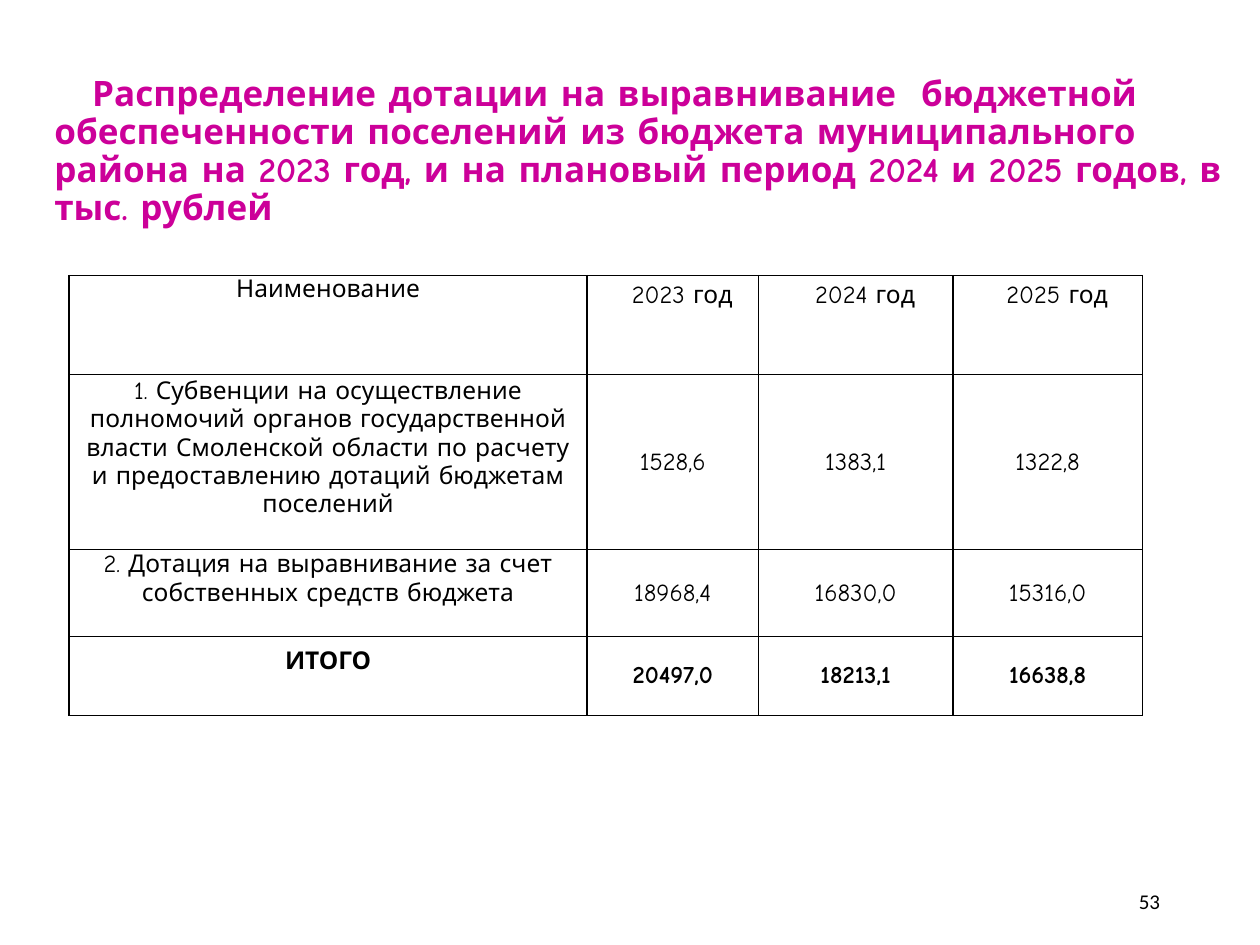
from lxml.etree import SubElement
from pptx import Presentation
from pptx.dml.color import RGBColor
from pptx.enum.text import MSO_ANCHOR, PP_ALIGN
from pptx.oxml.ns import qn
from pptx.util import Pt

TEXT_FONT = "Comic Neue"
BLACK = "000000"
TITLE = ("Распределение дотации на выравнивание  бюджетной обеспеченности "
         "поселений из бюджета муниципального района на 2023 год, и на плановый "
         "период 2024 и 2025 годов, в тыс. рублей")
COL_WIDTHS = [296, 98, 111, 108.5]
ROW_HEIGHTS = [56.5, 96.5, 48.5, 45.2]
ROWS = [
    ["Наименование", "2023 год", "2024 год", "2025 год"],
    ["1. Субвенции на осуществление полномочий органов государственной власти "
     "Смоленской области по расчету и предоставлению дотаций бюджетам поселений",
     "1528,6", "1383,1", "1322,8"],
    ["2. Дотация на выравнивание за счет собственных средств бюджета",
     "18968,4", "16830,0", "15316,0"],
    ["ИТОГО", "20497,0", "18213,1", "16638,8"],
]


def rgb(color):
    return RGBColor.from_string(color)


def add_run(p, text, size, font=TEXT_FONT, color=BLACK, bold=False):
    r = p.add_run()
    r.text = text
    r.font.size = Pt(size)
    r.font.name = font
    r.font.bold = bold
    r.font.color.rgb = rgb(color)


def add_text(s, box, text, align, **style):
    tf = s.shapes.add_textbox(*map(Pt, box)).text_frame
    tf.word_wrap = True
    tf.vertical_anchor = MSO_ANCHOR.MIDDLE
    p = tf.paragraphs[0]
    p.alignment = align
    add_run(p, text, **style)
    return p


def set_margins(cell, left, top, right, bottom):
    cell.margin_left, cell.margin_top = Pt(left), Pt(top)
    cell.margin_right, cell.margin_bottom = Pt(right), Pt(bottom)


def set_borders(cell, color=BLACK, width=1):
    tc_pr = cell._tc.get_or_add_tcPr()
    for i, side in enumerate(("a:lnL", "a:lnR", "a:lnT", "a:lnB")):
        ln = tc_pr.makeelement(qn(side), {"w": str(Pt(width))})
        fill = SubElement(ln, qn("a:solidFill"))
        SubElement(fill, qn("a:srgbClr"), val=color)
        tc_pr.insert(i, ln)


def fill_cell(cell, text, row, col):
    cell.fill.background()
    set_borders(cell)
    p = cell.text_frame.paragraphs[0]
    p.alignment = PP_ALIGN.CENTER
    add_run(p, text, 14, bold=row == len(ROWS) - 1)
    header, name = row == 0, col == 0
    cell.vertical_anchor = MSO_ANCHOR.TOP if header else MSO_ANCHOR.MIDDLE
    if header and not name:
        set_margins(cell, 7.2, 3.6, 7.2, 3.6)
        p._p.get_or_add_pPr().set("marL", str(Pt(10.8)))
    else:
        # Names in the body sit one line above the cell bottom
        set_margins(cell, 5, 0, 5, 16 if name and not header else 0)


def add_grant_table(s, left, top):
    frame = s.shapes.add_table(len(ROWS), len(COL_WIDTHS), Pt(left), Pt(top),
                               Pt(sum(COL_WIDTHS)), Pt(sum(ROW_HEIGHTS)))
    table = frame.table
    table.first_row = table.horz_banding = False
    for column, width in zip(table.columns, COL_WIDTHS):
        column.width = Pt(width)
    for i, (texts, height) in enumerate(zip(ROWS, ROW_HEIGHTS)):
        table.rows[i].height = Pt(height)
        for j, text in enumerate(texts):
            fill_cell(table.cell(i, j), text, i, j)


def main():
    prs = Presentation()
    prs.slide_width, prs.slide_height = Pt(720), Pt(540)
    s = prs.slides.add_slide(prs.slide_layouts[6])

    # Title with an indented first line
    p = add_text(s, (24, 28, 684, 118), TITLE, PP_ALIGN.LEFT,
                 size=20, color="CC0099", bold=True)
    p.line_spacing = 0.9
    p._p.get_or_add_pPr().set("indent", str(Pt(21.6)))

    # Table of grants by year
    add_grant_table(s, 39.5, 157.5)

    # Page number
    add_text(s, (508, 500.4, 162, 28.8), "53", PP_ALIGN.RIGHT,
             size=12, font="Calibri")

    prs.save("out.pptx")


if __name__ == "__main__":
    main()
